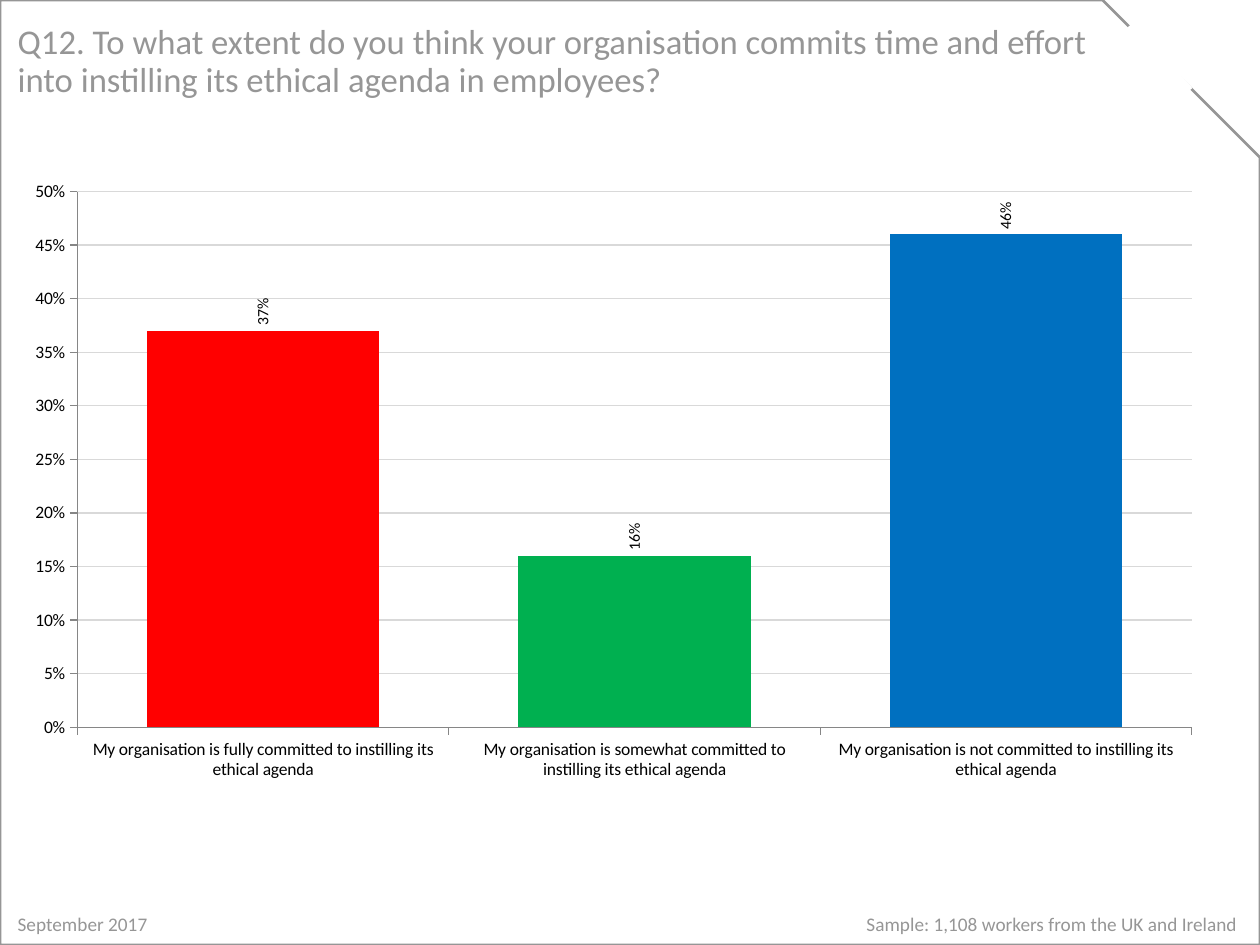
from lxml.etree import SubElement
from pptx import Presentation
from pptx.chart.data import CategoryChartData
from pptx.dml.color import RGBColor
from pptx.enum.chart import XL_CHART_TYPE, XL_LABEL_POSITION, XL_TICK_MARK
from pptx.enum.shapes import MSO_CONNECTOR, MSO_SHAPE
from pptx.enum.text import MSO_ANCHOR
from pptx.oxml import parse_xml
from pptx.oxml.ns import nsdecls, qn
from pptx.util import Pt

GREY = RGBColor(0x96, 0x96, 0x96)
WHITE = RGBColor(0xFF, 0xFF, 0xFF)
BLACK = RGBColor(0, 0, 0)
GRID = RGBColor(0xD9, 0xD9, 0xD9)
AXIS = RGBColor(0x86, 0x86, 0x86)
RED = RGBColor(0xFF, 0, 0)
GREEN = RGBColor(0, 0xB0, 0x50)
BLUE = RGBColor(0, 0x70, 0xC0)

FACE = "Calibri"
WIDE, HIGH = 720, 540
TITLE = ("Q12. To what extent do you think your organisation commits time "
         "and effort into instilling its ethical agenda in employees?")
FOOT = "September 2017\tSample: 1,108 workers from the UK and Ireland"
BARS = [("fully", 0.37, RED), ("somewhat", 0.16, GREEN), ("not", 0.46, BLUE)]


def set_font(font, size, color):
    font.name = FACE
    font.size = Pt(size)
    font.color.rgb = color


def add_text(slide, box, text, size, tab=None):
    """Add a grey text box, with a right tab stop if one is given."""
    frame = slide.shapes.add_textbox(*map(Pt, box)).text_frame
    frame.word_wrap = True
    frame.text = text
    para = frame.paragraphs[0]
    if tab:
        stops = SubElement(para._p.get_or_add_pPr(), qn("a:tabLst"))
        SubElement(stops, qn("a:tab"), pos=str(Pt(tab)), algn="r")
    for run in para.runs:
        set_font(run.font, size, GREY)
    return frame


def add_frame(slide):
    """Outline the slide, with a gap in the snipped corner."""
    edge = slide.shapes.add_shape(
        MSO_SHAPE.SNIP_1_RECTANGLE, 0, 0, Pt(WIDE), Pt(HIGH))
    edge.shadow.inherit = False
    edge.fill.background()
    edge.line.color.rgb = GREY
    edge.line.width = Pt(1.5)
    gap = slide.shapes.add_connector(
        MSO_CONNECTOR.STRAIGHT, Pt(645.8), Pt(14.4), Pt(679.7), Pt(51.8))
    gap.line.color.rgb = WHITE
    gap.line.width = Pt(4.5)
    SubElement(gap._element.spPr, qn("a:effectLst"))


def set_plot(chart, x, y, w, h):
    """Fix the inner plot area as fractions of the chart."""
    area = chart.element.xpath("c:chart/c:plotArea")[0]
    for old in area.findall(qn("c:layout")):
        area.remove(old)
    area.insert(0, parse_xml(
        f'<c:layout {nsdecls("c")}><c:manualLayout>'
        '<c:layoutTarget val="inner"/><c:xMode val="edge"/>'
        f'<c:yMode val="edge"/><c:x val="{x}"/><c:y val="{y}"/>'
        f'<c:w val="{w}"/><c:h val="{h}"/></c:manualLayout></c:layout>'))


def style_axis(axis):
    axis.major_tick_mark = XL_TICK_MARK.OUTSIDE
    axis.minor_tick_mark = XL_TICK_MARK.NONE
    axis.format.line.color.rgb = AXIS
    axis.format.line.width = Pt(0.75)
    set_font(axis.tick_labels.font, 10, BLACK)


def style_scale(axis):
    axis.minimum_scale, axis.maximum_scale = 0, 0.5
    axis.major_unit = 0.05
    axis.tick_labels.number_format = "0%"
    axis.tick_labels.number_format_is_linked = False
    axis.has_major_gridlines = True
    line = axis.major_gridlines.format.line
    line.color.rgb = GRID
    line.width = Pt(0.75)


def add_labels(chart, series):
    """Show each value above its bar, turned to read upwards."""
    labels = series.data_labels
    labels.show_value = True
    labels.position = XL_LABEL_POSITION.OUTSIDE_END
    labels.number_format = "0%"
    labels.number_format_is_linked = False
    set_font(labels.font, 9, BLACK)
    body = chart.element.xpath(".//c:ser/c:dLbls/c:txPr/a:bodyPr")[0]
    body.set("rot", "-5400000")
    body.set("vert", "horz")


def add_bars(slide):
    data = CategoryChartData(number_format="0%")
    data.categories = [
        f"My organisation is {level} committed to instilling its ethical agenda"
        for level, _, _ in BARS]
    data.add_series("Series 1", [value for _, value, _ in BARS])
    chart = slide.shapes.add_chart(
        XL_CHART_TYPE.COLUMN_CLUSTERED, Pt(19.4), Pt(99.4), Pt(670.3),
        Pt(386.6), data).chart
    chart.has_legend = False
    chart.has_title = False
    set_font(chart.font, 10, BLACK)
    set_plot(chart, 0.037, 0.026, 0.95, 0.792)
    style_axis(chart.category_axis)
    style_axis(chart.value_axis)
    style_scale(chart.value_axis)
    plot = chart.plots[0]
    plot.gap_width = 60
    plot.vary_by_categories = False
    series = plot.series[0]
    for i, (_, _, color) in enumerate(BARS):
        fill = series.points[i].format.fill
        fill.solid()
        fill.fore_color.rgb = color
    add_labels(chart, series)


def main():
    deck = Presentation()
    deck.slide_width, deck.slide_height = Pt(WIDE), Pt(HIGH)
    slide = deck.slides.add_slide(deck.slide_layouts[6])
    add_text(slide, (3, 517.7, 715.7, 20.9), FOOT, 11, tab=697)
    add_frame(slide)
    title = add_text(slide, (3, 11.5, 634.3, 48.2), TITLE, 19.8)
    title.vertical_anchor = MSO_ANCHOR.MIDDLE
    title.paragraphs[0].line_spacing = 0.9
    add_bars(slide)
    deck.save("out.pptx")


if __name__ == "__main__":
    main()
